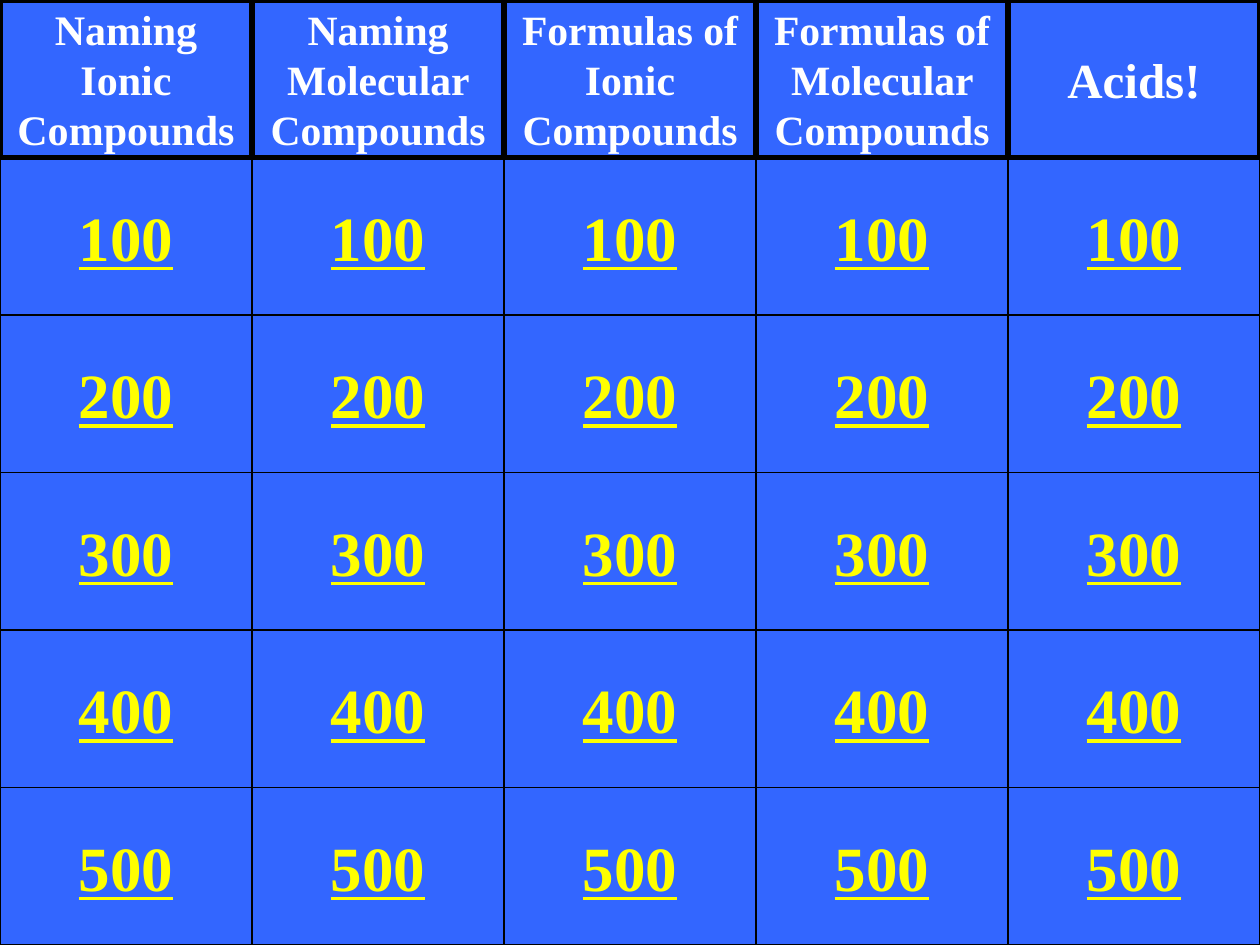
from dataclasses import dataclass

from pptx import Presentation
from pptx.dml.color import RGBColor as RGB
from pptx.enum.shapes import MSO_SHAPE as Shape
from pptx.enum.text import MSO_ANCHOR as Anchor, PP_ALIGN as Align
from pptx.util import Inches, Pt


@dataclass(frozen=True)
class Theme:
    font: str = "Times New Roman"
    blue: RGB = RGB(0x33, 0x66, 0xFF)
    black: RGB = RGB(0, 0, 0)
    white: RGB = RGB(0xFF, 0xFF, 0xFF)
    yellow: RGB = RGB(0xFF, 0xFF, 0)
    score: float = 36
    thin: float = 0.75
    thick: float = 3


THEME = Theme()
COLS, ROWS = 5, 6
TOPICS = [
    ("Naming Ionic Compounds", 24),
    ("Naming Molecular Compounds", 23.8),
    ("Formulas of Ionic Compounds", 23.8),
    ("Formulas of Molecular Compounds", 23.8),
    ("Acids!", 28),
]


def write(frame, text, size, color, wrap=True, line=False):
    frame.word_wrap = wrap
    frame.vertical_anchor = Anchor.MIDDLE
    para = frame.paragraphs[0]
    para.alignment = Align.CENTER
    run = para.add_run()
    run.text = text
    font = run.font
    font.name, font.size, font.bold = THEME.font, Pt(size), True
    font.underline = line
    font.color.rgb = color


class Board:
    """A slide split into equal cells, addressed by column and row."""

    def __init__(self, deck, theme):
        self.theme = theme
        self.slide = deck.slides.add_slide(deck.slide_layouts[6])
        self.wide = deck.slide_width // COLS
        self.high = deck.slide_height // ROWS
        fill = self.slide.background.fill
        fill.solid()
        fill.fore_color.rgb = theme.blue

    def cell(self, kind, col, row, width):
        box = self.slide.shapes.add_shape(
            kind, col * self.wide, row * self.high, self.wide, self.high)
        box.shadow.inherit = False
        box.fill.solid()
        box.fill.fore_color.rgb = self.theme.blue
        box.line.color.rgb = self.theme.black
        box.line.width = Pt(width)
        return box.text_frame

    def score(self, col, row):
        frame = self.cell(Shape.ACTION_BUTTON_CUSTOM, col, row, self.theme.thin)
        write(frame, str(row * 100), self.theme.score, self.theme.yellow,
              wrap=False, line=True)

    def topic(self, col, text, size):
        frame = self.cell(Shape.RECTANGLE, col, 0, self.theme.thick)
        write(frame, text, size, self.theme.white)


def main():
    deck = Presentation()
    deck.slide_width, deck.slide_height = Inches(10), Inches(7.5)
    board = Board(deck, THEME)
    for col in range(COLS):
        for row in range(1, ROWS):
            board.score(col, row)
    for col, (text, size) in enumerate(TOPICS):
        board.topic(col, text, size)
    deck.save("out.pptx")


if __name__ == "__main__":
    main()
